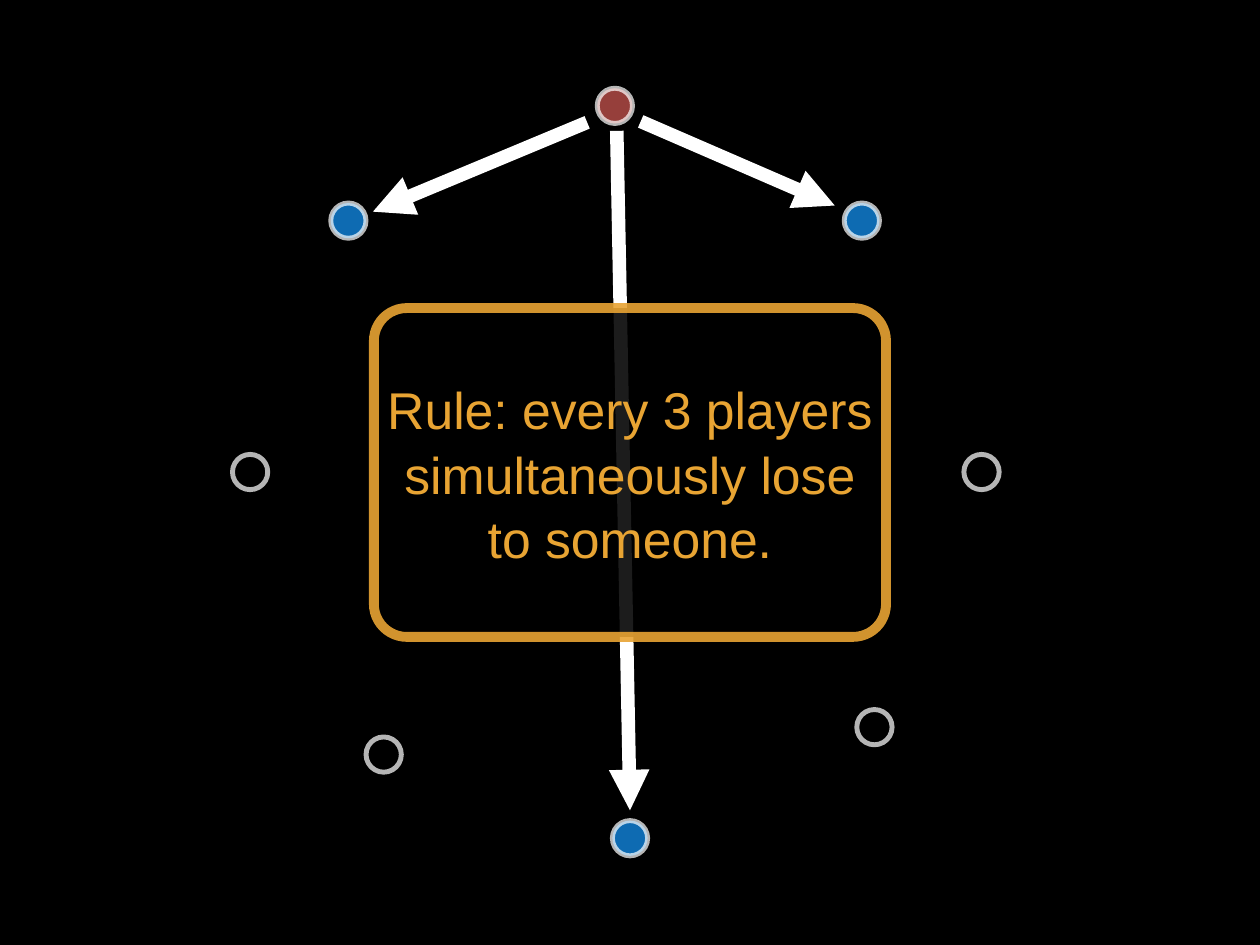
import pptx
import pptx.dml.color
import pptx.enum.shapes
import pptx.enum.text
import pptx.oxml
import pptx.oxml.ns
import pptx.util

COLORS = {
    "background": "000000",
    "line": "FFFFFF",
    "winner": "D45954",
    "loser": "1497FC",
    "rule": "E8A433",
}
SHAPES = pptx.enum.shapes.MSO_SHAPE
PLAYER_ALPHA = 71
RULE_ALPHA = 89

# Centres and ends are percentages of the slide's width and height.
PLAYERS = [
    (48.8, 11.2, "winner"),
    (30.45, 79.85, None),
    (69.4, 76.95, None),
    (68.4, 23.35, "loser"),
    (19.85, 49.95, None),
    (50, 88.7, "loser"),
    (77.9, 49.95, None),
    (27.65, 23.35, "loser"),
]
ARROWS = [
    ((46.6, 12.95), (29.6, 22.4)),
    ((48.95, 13.85), (50, 85.75)),
    ((50.85, 12.85), (66.25, 21.75)),
]


def rgb(name):
    return pptx.dml.color.RGBColor.from_string(COLORS[name])


class Board:
    """Draws on one slide, with lengths in percent of its size."""

    font = "Arial"

    def __init__(self, prs):
        self.width, self.height = prs.slide_width, prs.slide_height
        self.slide = prs.slides.add_slide(prs.slide_layouts[6])
        fill = self.slide.background.fill
        fill.solid()
        fill.fore_color.rgb = rgb("background")

    def x(self, share):
        return round(self.width * share / 100)

    def y(self, share):
        return round(self.height * share / 100)

    def paint(self, fill, color, alpha):
        """Give a fill a solid colour with an opacity in percent."""
        fill.solid()
        fill.fore_color.rgb = rgb(color)
        for tag in fill._xPr.iter(pptx.oxml.ns.qn("a:srgbClr")):
            if tag.getparent().getparent() is fill._xPr:
                node = tag.makeelement(pptx.oxml.ns.qn("a:alpha"), {"val": str(alpha * 1000)})
                tag.append(node)

    def shape(self, kind, cx, cy, w, h, fill, line, line_width, alpha):
        """Add a shape of size w by h (EMU) centred on cx, cy (percent)."""
        sp = self.slide.shapes.add_shape(
            kind, self.x(cx) - w // 2, self.y(cy) - h // 2, w, h)
        sp.shadow.inherit = False
        if fill:
            self.paint(sp.fill, fill, alpha)
        else:
            sp.fill.background()
        self.paint(sp.line.fill, line, alpha)
        sp.line.width = pptx.util.Pt(line_width)
        return sp

    def player(self, cx, cy, fill):
        size = self.x(2.8)
        self.shape(SHAPES.OVAL, cx, cy, size, size, fill, "line", 4, PLAYER_ALPHA)

    def arrow(self, start, end):
        cxn = self.slide.shapes.add_connector(
            pptx.enum.shapes.MSO_CONNECTOR.STRAIGHT,
            self.x(start[0]), self.y(start[1]), self.x(end[0]), self.y(end[1]))
        cxn.line.color.rgb = rgb("line")
        cxn.line.width = pptx.util.Pt(11)
        ln = cxn.line._get_or_add_ln()
        ln.append(ln.makeelement(pptx.oxml.ns.qn("a:tailEnd"), {"type": "triangle"}))
        sp_pr = ln.getparent()
        sp_pr.append(sp_pr.makeelement(pptx.oxml.ns.qn("a:effectLst"), {}))

    def rule_box(self, text, cx, cy, w, h):
        sp = self.shape(SHAPES.ROUNDED_RECTANGLE, cx, cy, self.x(w), self.y(h),
                        "background", "rule", 8, RULE_ALPHA)
        sp.adjustments[0] = 0.1
        tf = sp.text_frame
        tf.word_wrap = True
        tf.vertical_anchor = pptx.enum.text.MSO_ANCHOR.MIDDLE
        tf.margin_left = tf.margin_right = tf.margin_top = tf.margin_bottom = 0
        tf.text = text
        p = tf.paragraphs[0]
        p.alignment = pptx.enum.text.PP_ALIGN.CENTER
        p.line_spacing = 1.04
        r = p.runs[0]
        r.font.name = self.font
        r.font.size = pptx.util.Pt(42)
        r.font.color.rgb = rgb("rule")


def main():
    prs = pptx.Presentation()
    prs.slide_width = pptx.util.Inches(14.22)
    prs.slide_height = pptx.util.Inches(10.67)
    board = Board(prs)
    for cx, cy, fill in PLAYERS:
        board.player(cx, cy, fill)
    for start, end in ARROWS:
        board.arrow(start, end)
    board.rule_box("Rule: every 3 players simultaneously lose to someone.",
                   50, 50, 40.65, 34.8)
    prs.save("out.pptx")


if __name__ == "__main__":
    main()
